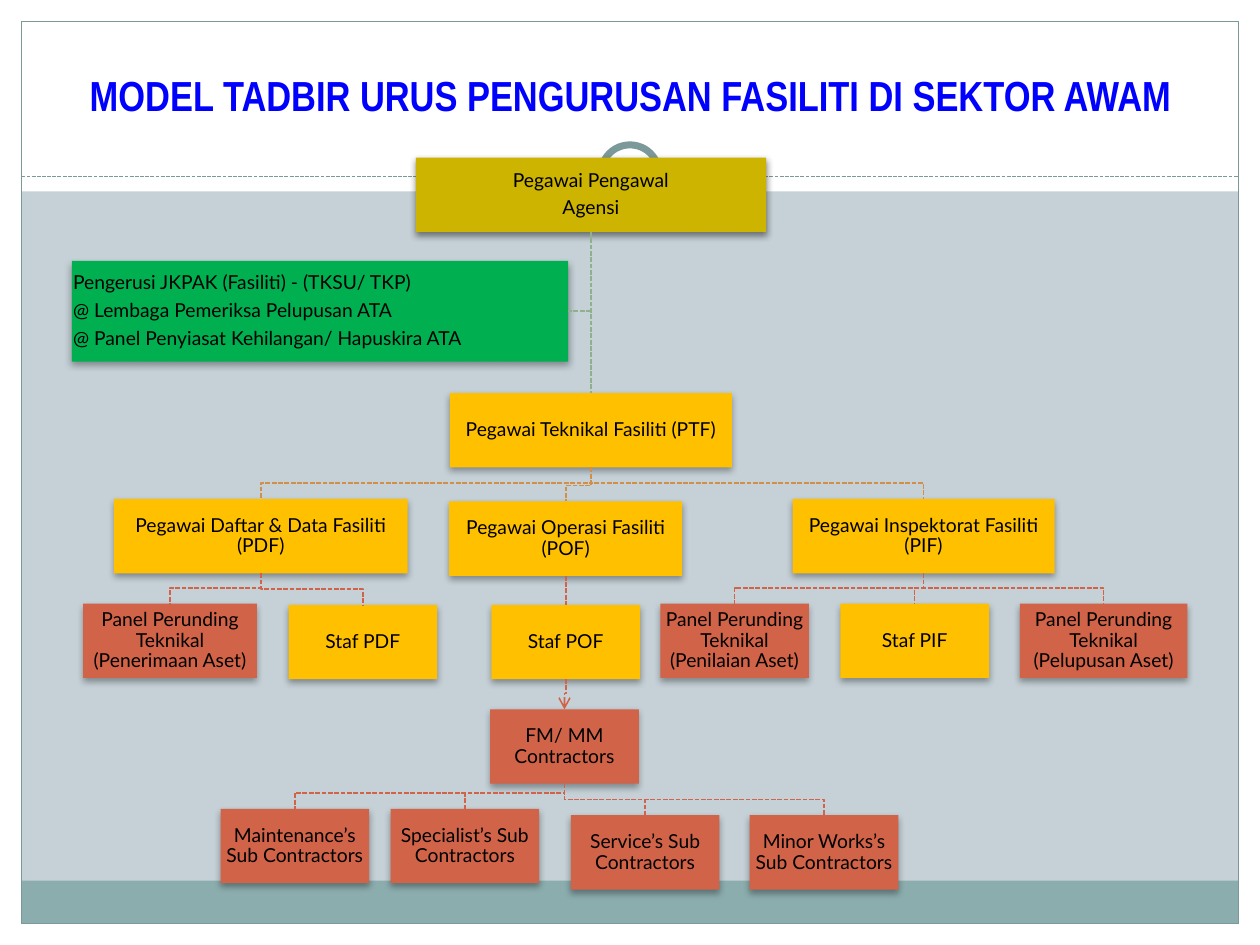
from lxml.etree import SubElement
from pptx import Presentation
from pptx.dml.color import RGBColor
from pptx.enum.dml import MSO_LINE as Dash
from pptx.enum.shapes import MSO_CONNECTOR as Link, MSO_SHAPE as Preset
from pptx.enum.text import MSO_ANCHOR as Anchor, MSO_AUTO_SIZE as Fit, PP_ALIGN as Align
from pptx.oxml.ns import qn
from pptx.util import Inches, Pt

COLORS = {
    "backdrop": "C5D1D7", "white": "FFFFFF", "band": "8CADAE", "frame": "7C999A",
    "title": "0000FF", "text": "000000", "shadow": "000000",
    "olive": "CCB400", "amber": "FFC000", "brick": "D16349", "green": "00B050",
    "sage": "8FB08C", "orange": "D19049",
}
RGB = {name: RGBColor.from_string(value) for name, value in COLORS.items()}
COLUMNS, ROWS = 100, 75

deck = Presentation()
deck.slide_width, deck.slide_height = Inches(10), Inches(7.5)
column, row = deck.slide_width // COLUMNS, deck.slide_height // ROWS
slide = deck.slides.add_slide(deck.slide_layouts[5])
slide.background.fill.solid()
slide.background.fill.fore_color.rgb = RGB["backdrop"]


def add_block(preset, left, top, width, height, fill):
    block = slide.shapes.add_shape(
        preset, round(left * column), round(top * row), round(width * column), round(height * row))
    block.shadow.inherit = False
    block.line.fill.background()
    if fill:
        block.fill.solid()
        block.fill.fore_color.rgb = RGB[fill]
    else:
        block.fill.background()
    return block


def draw_line(line, color, weight, dash=None):
    line.color.rgb = RGB[color]
    line.width = Pt(weight)
    if dash:
        line.dash_style = dash


edge = 1.7
for left, top, width, height, fill in [
    (0, ROWS - edge, COLUMNS, edge, "white"),
    (0, 0, COLUMNS, 15.2, "white"),
    (0, 0, edge, ROWS, "white"),
    (COLUMNS - edge, 0, edge, ROWS, "white"),
    (edge, 69.9, COLUMNS - 2 * edge, 3.4, "band"),
]:
    add_block(Preset.RECTANGLE, left, top, width, height, fill)

border = add_block(Preset.RECTANGLE, edge, edge, COLUMNS - 2 * edge, ROWS - 2 * edge, None)
draw_line(border.line, "frame", 0.75)
divider = slide.shapes.add_connector(
    Link.STRAIGHT, round(edge * column), 14 * row, round((COLUMNS - edge) * column), 14 * row)
draw_line(divider.line, "frame", 0.75, Dash.SQUARE_DOT)
SubElement(divider.element.spPr, qn("a:effectLst"))
add_block(Preset.OVAL, 46.7, 10.5, 6.7, 6.7, "white")
ring = add_block(Preset.OVAL, 47.7, 11.5, 4.6, 4.6, "white")
draw_line(ring.line, "frame", 4)

title = slide.shapes.title
title.left, title.top = 2 * column, round(2.1 * row)
title.width, title.height = round(96.1 * column), round(7.9 * row)
title.element.getparent().append(title.element)
title.text_frame.auto_size = Fit.NONE
title.text_frame.word_wrap = True
title.text_frame.vertical_anchor = Anchor.BOTTOM
heading = title.text_frame.paragraphs[0]
heading.alignment = Align.CENTER
words = heading.add_run()
words.text = "MODEL TADBIR URUS PENGURUSAN FASILITI DI SEKTOR AWAM"
words.font.name, words.font.size, words.font.bold = "Arial Narrow", Pt(24), True
words.font.color.rgb = RGB["title"]

box_height, staff_width = 5.9, 11.8
officers = {
    "agency": (46.9, 12.5, 27.8, "olive", ["Pegawai Pengawal", "Agensi"]),
    "PTF": (46.9, 31.2, 22.4, "amber", ["Pegawai Teknikal Fasiliti (PTF)"]),
    "PDF": (20.7, 39.6, 23.3, "amber", ["Pegawai Daftar & Data Fasiliti (PDF)"]),
    "receipt": (13.5, 47.9, 13.8, "brick", ["Panel Perunding Teknikal (Penerimaan Aset)"]),
    "PDF staff": (28.8, 48, staff_width, "amber", ["Staf PDF"]),
    "POF": (44.9, 39.8, 18.5, "amber", ["Pegawai Operasi Fasiliti (POF)"]),
    "POF staff": (44.9, 48, staff_width, "amber", ["Staf POF"]),
    "contractors": (44.8, 56.3, staff_width, "brick", ["FM/ MM Contractors"]),
    "maintenance": (23.4, 64.2, staff_width, "brick", ["Maintenance’s Sub Contractors"]),
    "specialist": (36.9, 64.2, staff_width, "brick", ["Specialist’s Sub Contractors"]),
    "service": (51.2, 64.7, staff_width, "brick", ["Service’s Sub Contractors"]),
    "minor works": (65.4, 64.7, staff_width, "brick", ["Minor Works’s Sub Contractors"]),
    "PIF": (73.3, 39.6, 20.8, "amber", ["Pegawai Inspektorat Fasiliti (PIF)"]),
    "valuation": (58.3, 47.9, staff_width, "brick", ["Panel Perunding Teknikal (Penilaian Aset)"]),
    "PIF staff": (72.6, 47.9, staff_width, "amber", ["Staf PIF"]),
    "disposal": (87.6, 47.9, 13.3, "brick", ["Panel Perunding Teknikal (Pelupusan Aset)"]),
    "committee": (25.4, 20.7, 39.4, "green", [
        "Pengerusi JKPAK (Fasiliti) - (TKSU/ TKP)",
        "@ Lembaga Pemeriksa Pelupusan ATA",
        "@ Panel Penyiasat Kehilangan/ Hapuskira ATA"]),
}
boxes = {}
for role, (center, top, width, fill, lines) in officers.items():
    height = 8 if role == "committee" else box_height
    box = boxes[role] = add_block(
        Preset.RECTANGLE, center - width / 2, top, width, height, fill)
    shadow = SubElement(
        box.element.spPr.find(qn("a:effectLst")), qn("a:outerShdw"),
        blurRad=str(Pt(4)), dist=str(Pt(2)), dir="5400000", rotWithShape="0")
    tint = SubElement(shadow, qn("a:srgbClr"), val=COLORS["shadow"])
    SubElement(tint, qn("a:alpha"), val="45000" if role == "agency" else "35000")
    frame = box.text_frame
    frame.word_wrap = True
    frame.vertical_anchor = Anchor.MIDDLE
    frame.margin_left = frame.margin_right = frame.margin_top = frame.margin_bottom = Inches(0.01)
    for index, line in enumerate(lines):
        paragraph = frame.add_paragraph() if index else frame.paragraphs[0]
        paragraph.alignment = Align.LEFT if role == "committee" else Align.CENTER
        paragraph.line_spacing = 0.9
        paragraph.space_after = Pt(3.85)
        run = paragraph.add_run()
        run.text = line
        run.font.name, run.font.size = "Lato", Pt(11)
        run.font.color.rgb = RGB["text"]

for superior, color, subordinates in [
    ("agency", "sage", ["PTF"]),
    ("PTF", "orange", ["PDF", "POF", "PIF"]),
    ("PDF", "brick", ["receipt", "PDF staff"]),
    ("POF", "brick", ["POF staff"]),
    ("PIF", "brick", ["valuation", "PIF staff", "disposal"]),
    ("POF staff", "brick", ["contractors"]),
    ("contractors", "brick", ["maintenance", "specialist", "service", "minor works"]),
]:
    start_x = round(officers[superior][0] * column)
    start_y = round((officers[superior][1] + box_height) * row)
    for subordinate in subordinates:
        end_x, end_y = (round(share) for share in (
            officers[subordinate][0] * column, officers[subordinate][1] * row))
        if start_x == end_x:
            branch = slide.shapes.add_connector(Link.STRAIGHT, start_x, start_y, end_x, end_y)
            branch.begin_connect(boxes[superior], 2)
            branch.end_connect(boxes[subordinate], 0)
            SubElement(branch.element.spPr, qn("a:effectLst"))
        else:
            bend_y = round(end_y - 1.25 * row)
            outline = slide.shapes.build_freeform(start_x, start_y)
            outline.add_line_segments(
                [(start_x, bend_y), (end_x, bend_y), (end_x, end_y)], close=False)
            branch = outline.convert_to_shape()
            branch.fill.background()
            branch.shadow.inherit = False
        draw_line(branch.line, color, 0.9, Dash.SQUARE_DOT)
        if subordinate == "contractors":
            SubElement(branch.element.spPr.find(qn("a:ln")), qn("a:tailEnd"), type="arrow")

stem_x, committee_y = round(46.9 * column), round(24.7 * row)
side_link = slide.shapes.add_connector(
    Link.STRAIGHT, stem_x, committee_y, round(45.1 * column), committee_y)
side_link.end_connect(boxes["committee"], 3)
draw_line(side_link.line, "sage", 0.9, Dash.SQUARE_DOT)
SubElement(side_link.element.spPr, qn("a:effectLst"))

deck.save("out.pptx")
